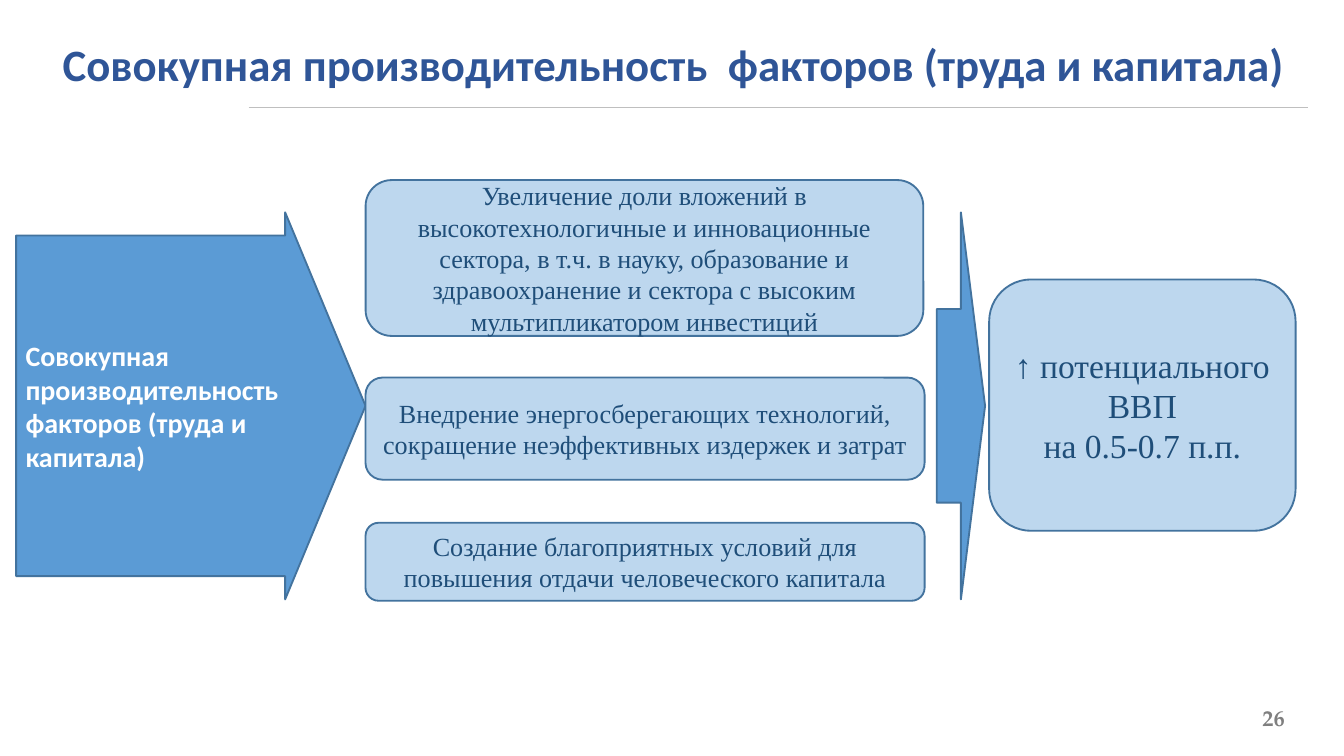
"""Build the slide on total factor productivity."""
from dataclasses import dataclass

from lxml import etree
from pptx import Presentation
from pptx import util as u
from pptx.dml.color import RGBColor
from pptx.enum import shapes, text
from pptx.oxml import ns

NAVY = RGBColor(0x2F, 0x55, 0x97)
INK = RGBColor(0x1F, 0x4E, 0x79)
BLUE = RGBColor(0x5B, 0x9B, 0xD5)
PALE = RGBColor(0xBD, 0xD7, 0xEE)
EDGE = RGBColor(0x43, 0x73, 0x9E)
RULE = RGBColor(0xBF, 0xBF, 0xBF)
GREY = RGBColor(0x7F, 0x7F, 0x7F)
WHITE = RGBColor(0xFF, 0xFF, 0xFF)

ARROW = shapes.MSO_SHAPE.RIGHT_ARROW
ROUND = shapes.MSO_SHAPE.ROUNDED_RECTANGLE
LEFT, MID, RIGHT = text.PP_ALIGN.LEFT, text.PP_ALIGN.CENTER, text.PP_ALIGN.RIGHT


@dataclass(frozen=True)
class Style:
    """Hold the look of a text."""
    name: str
    size: float
    color: RGBColor
    bold: bool = False
    align: text.PP_ALIGN = MID


@dataclass(frozen=True)
class Block:
    """Hold one filled shape and its text."""
    kind: shapes.MSO_SHAPE
    at: tuple[float, float, float, float]
    fill: RGBColor
    style: Style
    lines: tuple[str, ...] = ()
    adjust: tuple[float, ...] = ()


HEAD = Style("Calibri", 24, NAVY, True)
CAUSE = Style("Calibri", 15, WHITE, True, LEFT)
STEP = Style("Times New Roman", 14, INK)
GOAL = Style("Times New Roman", 18, INK)
PAGE = Style("TeX Gyre Pagella", 12, GREY, True, RIGHT)

BLOCKS = (
    Block(ARROW, (0.12, 1.58, 2.6, 2.88), BLUE, CAUSE,
          ("Совокупная производительность факторов (труда и капитала)",),
          (0.88, 0.23)),
    Block(ROUND, (2.72, 1.34, 4.15, 1.16), PALE, STEP,
          ("Увеличение доли вложений в высокотехнологичные и инновационные "
           "сектора, в т.ч. в науку, образование и здравоохранение и сектора "
           "с высоким мультипликатором инвестиций",)),
    Block(ROUND, (2.72, 2.81, 4.16, 0.76), PALE, STEP,
          ("Внедрение энергосберегающих технологий, "
           "сокращение неэффективных издержек и затрат",)),
    Block(ROUND, (2.72, 3.89, 4.16, 0.58), PALE, STEP,
          ("Создание благоприятных условий для "
           "повышения отдачи человеческого капитала",)),
    Block(ARROW, (6.97, 1.58, 0.36, 2.88), BLUE, STEP),
    Block(ROUND, (7.36, 2.08, 2.28, 1.87), PALE, GOAL,
          ("↑ потенциального ВВП", "на 0.5-0.7 п.п.")),
)


def write(frame, lines: tuple[str, ...], style: Style,
          pads: tuple[float, float] = (0.07, 0.04), wrap: bool = True) -> None:
    """Fill a text frame with styled lines."""
    side, edge = map(u.Inches, pads)
    form = {"word_wrap": wrap, "auto_size": text.MSO_AUTO_SIZE.NONE,
            "vertical_anchor": text.MSO_ANCHOR.MIDDLE,
            "margin_left": side, "margin_right": side,
            "margin_top": edge, "margin_bottom": edge}
    for key, value in form.items():
        setattr(frame, key, value)
    frame.text = "\n".join(lines)
    face = {"name": style.name, "size": u.Pt(style.size), "bold": style.bold}
    for para in frame.paragraphs:
        para.alignment = style.align
        for run in para.runs:
            for key, value in face.items():
                setattr(run.font, key, value)
            run.font.color.rgb = style.color


def draw(slide, block: Block) -> None:
    """Draw one block."""
    shape = slide.shapes.add_shape(block.kind, *map(u.Inches, block.at))
    shape.shadow.inherit = False
    for spot, value in enumerate(block.adjust):
        shape.adjustments[spot] = value
    shape.fill.solid()
    shape.fill.fore_color.rgb = block.fill
    shape.line.color.rgb = EDGE
    shape.line.width = u.Pt(1)
    if block.lines:
        write(shape.text_frame, block.lines, block.style)


def rule(slide) -> None:
    """Draw the line under the title."""
    ends = map(u.Inches, (1.85, 0.8, 9.73, 0.8))
    line = slide.shapes.add_connector(shapes.MSO_CONNECTOR.STRAIGHT, *ends)
    line.line.color.rgb = RULE
    line.line.width = u.Pt(1)
    etree.SubElement(line._element.spPr, ns.qn("a:effectLst"))


def main() -> None:
    """Build and save the deck."""
    deck = Presentation()
    deck.slide_width = u.Inches(10)
    deck.slide_height = deck.slide_width * 9 // 16
    slide = deck.slides.add_slide(deck.slide_layouts[5])
    rule(slide)
    page = slide.shapes.add_textbox(*map(u.Inches, (9.08, 5.29, 0.48, 0.1)))
    write(page.text_frame, ("26",), PAGE, (0, 0), False)
    for block in BLOCKS:
        draw(slide, block)
    title = slide.shapes.title
    place = {"left": 0.35, "top": 0.22, "width": 9.32, "height": 0.5}
    for key, value in place.items():
        setattr(title, key, u.Inches(value))
    write(title.text_frame,
          ("Совокупная производительность  факторов (труда и капитала)",), HEAD)
    deck.save("out.pptx")


if __name__ == "__main__":
    main()
